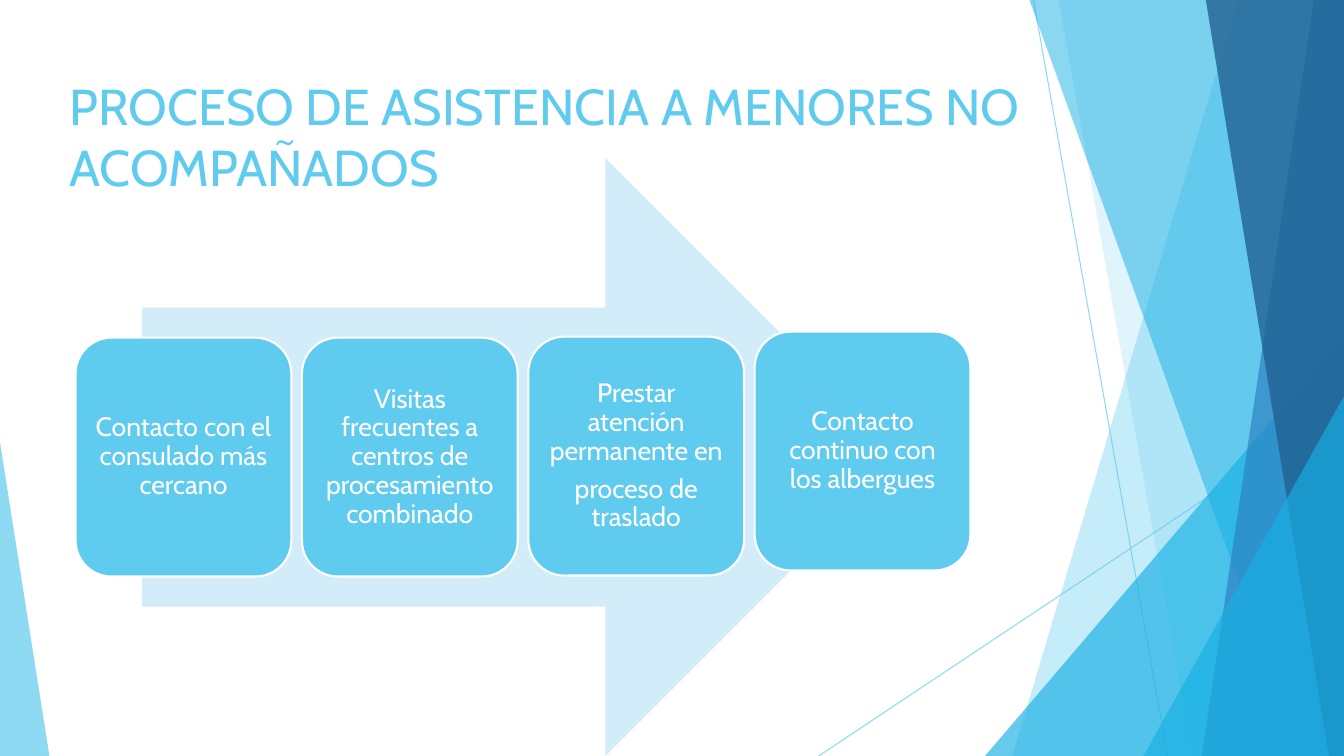
from lxml.etree import SubElement
from pptx import Presentation
from pptx.dml.color import RGBColor
from pptx.enum.shapes import MSO_CONNECTOR as Connector, MSO_SHAPE as Preset
from pptx.enum.text import MSO_ANCHOR as Anchor, PP_ALIGN as Align
from pptx.oxml.ns import qn
from pptx.util import Inches, Pt

SKY = RGBColor(0x5F, 0xCB, 0xEF)
CYAN = RGBColor(0x17, 0xB0, 0xE4)
BLUE = RGBColor(0x2E, 0x83, 0xC3)
NAVY = RGBColor(0x22, 0x62, 0x92)
PALE = RGBColor(0xD2, 0xEC, 0xF9)
WHITE = RGBColor(0xFF, 0xFF, 0xFF)

COLUMNS, ROWS = 13.33, 7.5
FONT = "Cabin"
STEP_LEFT, STEP_PITCH, STEP_WIDTH, STEP_HEIGHT = 0.75, 2.245, 2.14, 2.37

TITLE = "PROCESO DE ASISTENCIA A MENORES NO ACOMPAÑADOS"
STEPS = [
    (3.35, ["Contacto con el consulado más cercano"]),
    (3.35, ["Visitas frecuentes a centros de procesamiento combinado"]),
    (3.34, ["Prestar atención permanente en", "proceso de traslado"]),
    (3.29, ["Contacto continuo con los albergues"]),
]
RAYS = [((10.25, 0), (11.58, ROWS)), ((COLUMNS, 4.03), (8.12, ROWS))]
BACK_BANDS = [(12.28, 10.04, SKY, 36), (10.5, 11.83, SKY, 20)]
FRONT_BANDS = [(10.21, 12.91, CYAN, 50), (13.03, 11.92, BLUE, 70), (11.96, 13.18, NAVY, 80)]

TITLE_FRAME = {"word_wrap": True, "vertical_anchor": Anchor.TOP}
STEP_FRAME = {"word_wrap": True, "vertical_anchor": Anchor.MIDDLE,
              **{f"margin_{side}": Inches(0.08) for side in ("left", "top", "right", "bottom")}}
TITLE_PARAGRAPH = {"alignment": Align.LEFT}
STEP_PARAGRAPH = {"alignment": Align.CENTER, "line_spacing": 0.9, "space_after": Pt(6.65)}


def apply(target, formats):
    """Set every attribute named in formats on target."""
    for name, value in formats.items():
        setattr(target, name, value)


class SlideBuilder:
    """Draw styled elements on one slide, measured in grid columns and rows."""

    def __init__(self, deck):
        """Add a blank slide and work out the grid unit."""
        self.slide = deck.slides.add_slide(deck.slide_layouts[6])
        self.shapes = self.slide.shapes
        self.column = deck.slide_width / COLUMNS
        self.row = deck.slide_height / ROWS

    def point(self, x, y):
        """Turn a grid position into slide units."""
        return round(x * self.column), round(y * self.row)

    def fade(self, element, opacity):
        """Give the colour of an element an opacity in percent."""
        colour = element.find(".//" + qn("a:srgbClr"))
        SubElement(colour, qn("a:alpha"), val=str(opacity * 1000))

    def paint(self, shape, colour, opacity=100):
        """Fill a shape without outline or shadow."""
        shape.shadow.inherit = False
        shape.fill.solid()
        shape.fill.fore_color.rgb = colour
        if opacity < 100:
            self.fade(shape.element, opacity)
        shape.line.fill.background()
        return shape

    def preset(self, kind, left, top, width, height, colour, opacity=100, adjust=None):
        """Add a filled preset shape."""
        shape = self.shapes.add_shape(kind, *self.point(left, top), *self.point(width, height))
        if adjust is not None:
            shape.adjustments[0] = adjust
        return self.paint(shape, colour, opacity)

    def band(self, top_x, bottom_x, colour, opacity):
        """Add a slanted band reaching the right edge of the slide."""
        outline = self.shapes.build_freeform(*self.point(top_x, 0))
        corners = [(COLUMNS, 0), (COLUMNS, ROWS), (bottom_x, ROWS)]
        outline.add_line_segments([self.point(*corner) for corner in corners], close=True)
        self.paint(outline.convert_to_shape(), colour, opacity)

    def ray(self, start, end):
        """Add a thin translucent line."""
        ray = self.shapes.add_connector(Connector.STRAIGHT, *self.point(*start), *self.point(*end))
        ray.line.color.rgb = SKY
        ray.line.width = Pt(0.75)
        self.fade(ray.element, 70)
        SubElement(ray.element.spPr, qn("a:effectLst"))

    def fill_text(self, frame, texts, size, colour, frame_format, paragraph_format):
        """Put one paragraph per text into a frame."""
        apply(frame, frame_format)
        for index, text in enumerate(texts):
            paragraph = frame.add_paragraph() if index else frame.paragraphs[0]
            apply(paragraph, paragraph_format)
            run = paragraph.add_run()
            run.text = text
            apply(run.font, {"name": FONT, "size": Pt(size)})
            run.font.color.rgb = colour

    def title(self, text):
        """Add the slide heading."""
        heading = self.shapes.add_textbox(*self.point(0.59, 0.7), *self.point(10.3, 1.18))
        self.fill_text(heading.text_frame, [text], 36, SKY, TITLE_FRAME, TITLE_PARAGRAPH)

    def step(self, position, top, texts):
        """Add one rounded step of the process."""
        left = STEP_LEFT + position * STEP_PITCH
        card = self.preset(Preset.ROUNDED_RECTANGLE, left, top, STEP_WIDTH, STEP_HEIGHT, SKY)
        card.line.color.rgb = WHITE
        card.line.width = Pt(1.5)
        self.fill_text(card.text_frame, texts, 19, WHITE, STEP_FRAME, STEP_PARAGRAPH)

    def corner(self, left, top, width, colour, opacity, apex):
        """Add a right triangle standing on the bottom edge."""
        self.preset(Preset.ISOSCELES_TRIANGLE, left, top, width, ROWS - top, colour, opacity, apex)


def main():
    """Build and save the slide."""
    deck = Presentation()
    apply(deck, {"slide_width": Inches(COLUMNS), "slide_height": Inches(ROWS)})
    builder = SlideBuilder(deck)
    for start, end in RAYS:
        builder.ray(start, end)
    for band in BACK_BANDS:
        builder.band(*band)
    builder.corner(9.77, 3.33, 3.56, CYAN, 66, 1)
    for band in FRONT_BANDS:
        builder.band(*band)
    builder.corner(11.34, 3.93, 1.99, CYAN, 66, 1)
    builder.corner(0, 4.39, 0.49, SKY, 70, 0)
    builder.title(TITLE)
    builder.preset(Preset.RIGHT_ARROW, 1.41, 1.57, 7.56, 5.93, PALE)
    for position, (top, texts) in enumerate(STEPS):
        builder.step(position, top, texts)
    deck.save("out.pptx")


if __name__ == "__main__":
    main()
